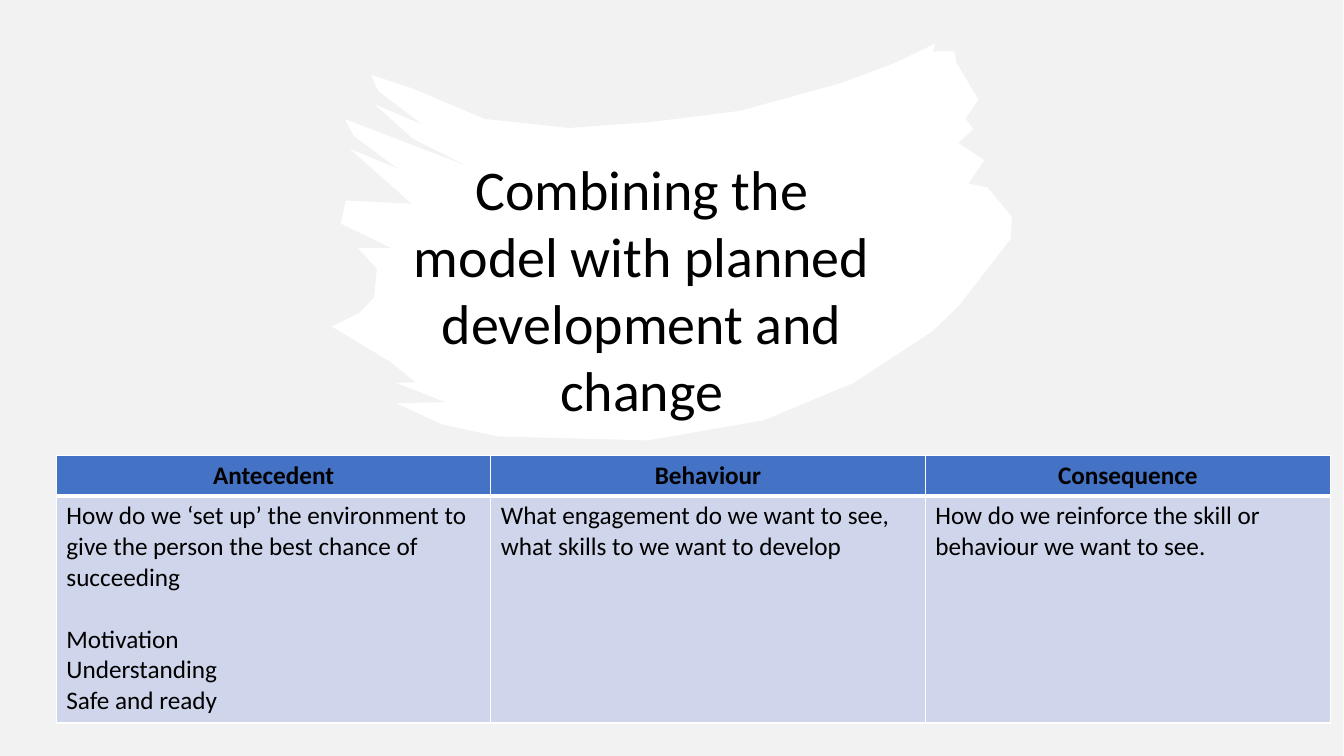
from lxml import etree
from pptx import Presentation
from pptx import util as u
from pptx.dml.color import RGBColor
from pptx.enum import shapes, text
from pptx.oxml import ns

BRUSH = [
    (928, 43), (889, 62), (836, 82), (734, 110), (646, 121), (565, 127), (481, 118),
    (410, 88), (368, 74), (375, 90), (418, 123), (371, 103), (410, 138), (462, 164),
    (342, 118), (351, 135), (394, 167), (346, 147), (408, 202), (343, 199), (338, 222),
    (388, 246), (355, 246), (374, 267), (371, 295), (357, 310), (329, 324), (387, 359),
    (412, 379), (393, 380), (442, 399), (393, 400), (438, 421), (493, 433), (643, 437),
    (758, 417), (847, 380), (925, 329), (951, 304), (1003, 237), (1004, 215), (980, 186),
    (961, 182), (977, 159), (951, 142), (966, 128), (958, 118), (971, 99), (949, 62),
    (947, 51), (926, 51),
]
PAGE = [(0, 0), (1333, 0), (1333, 750), (0, 750)]
HEADINGS = ["Antecedent", "Behaviour", "Consequence"]
QUESTIONS = [
    ["How do we ‘set up’ the environment to give the person the best chance of succeeding",
     "Motivation", "Understanding", "Safe and ready"],
    ["What engagement do we want to see, what skills to we want to develop"],
    ["How do we reinforce the skill or behaviour we want to see."],
]


def colour(value):
    return RGBColor.from_string(value)


def write(frame, lines, size=18, bold=False, align=text.PP_ALIGN.LEFT, gap=0):
    frame.word_wrap = True
    for index, line in enumerate(lines):
        paragraph = frame.paragraphs[0] if index == 0 else frame.add_paragraph()
        paragraph.alignment = align
        paragraph.line_spacing = 1.0
        paragraph.space_before = u.Pt(gap if index == 1 else 0)
        run = paragraph.add_run()
        run.text = line
        run.font.name = "Calibri"
        run.font.size = u.Pt(size)
        run.font.bold = bold
        run.font.color.rgb = colour("000000")


class Deck:
    white, grey, blue, pale = "FFFFFF", "E7E6E6", "4472C4", "CFD5EA"

    def __init__(self):
        self.show = Presentation()
        self.show.slide_width, self.show.slide_height = u.Cm(33.87), u.Cm(19.05)
        self.slide = self.show.slides.add_slide(self.show.slide_layouts[5])

    def paint(self, shape, fill):
        shape.shadow.inherit = False
        shape.fill.solid()
        shape.fill.fore_color.rgb = colour(fill)
        shape.line.fill.background()

    def backdrop(self):
        page = self.slide.shapes.add_shape(
            shapes.MSO_SHAPE.RECTANGLE, 0, 0, self.show.slide_width, self.show.slide_height)
        self.paint(page, self.white)

    def frame(self, hole, edge, opacity):
        builder = self.slide.shapes.build_freeform(*hole[0], scale=u.Cm(2.54) / 100)
        builder.add_line_segments(hole[1:], close=True)
        builder.move_to(*edge[0])
        builder.add_line_segments(edge[1:], close=True)
        surround = builder.convert_to_shape()
        self.paint(surround, self.grey)
        tint = surround._element.spPr.find(".//" + ns.qn("a:srgbClr"))
        etree.SubElement(tint, ns.qn("a:alpha"), val=str(opacity * 1000))

    def title(self, words, left, top, width, height):
        heading = self.slide.shapes.title
        self.slide.shapes._spTree.append(heading._element)
        heading.left, heading.top = u.Cm(left), u.Cm(top)
        heading.width, heading.height = u.Cm(width), u.Cm(height)
        heading.text_frame.vertical_anchor = text.MSO_ANCHOR.TOP
        heading.text_frame.auto_size = text.MSO_AUTO_SIZE.SHAPE_TO_FIT_TEXT
        write(heading.text_frame, [words], size=40, align=text.PP_ALIGN.CENTER)

    def border(self, cell, **widths):
        for side in "LRTB":
            edge = etree.SubElement(cell._tc.get_or_add_tcPr(), ns.qn("a:ln" + side),
                                    w=str(u.Pt(widths.get(side, 1))))
            fill = etree.SubElement(edge, ns.qn("a:solidFill"))
            etree.SubElement(fill, ns.qn("a:srgbClr"), val=self.white)

    def cell(self, cell, lines, fill, widths, **style):
        self.border(cell, **widths)
        cell.fill.solid()
        cell.fill.fore_color.rgb = colour(fill)
        write(cell.text_frame, lines, **style)

    def table(self, left, top, widths, heights):
        grid = self.slide.shapes.add_table(
            len(heights), len(widths), u.Cm(left), u.Cm(top),
            u.Cm(sum(widths)), u.Cm(sum(heights))).table
        for row, height in zip(grid.rows, heights):
            row.height = u.Cm(height)
        for index, width in enumerate(widths):
            grid.columns[index].width = u.Cm(width)
            self.cell(grid.cell(0, index), [HEADINGS[index]], self.blue, {"B": 3},
                      bold=True, align=text.PP_ALIGN.CENTER)
            self.cell(grid.cell(1, index), QUESTIONS[index], self.pale, {"T": 3}, gap=22)


def main():
    deck = Deck()
    deck.backdrop()
    deck.frame(BRUSH, PAGE, opacity=50)
    deck.title("Combining the model with planned development and change", 9.96, 3.76, 12.42, 7.09)
    deck.table(1.42, 11.48, [10.95, 10.95, 10.21], [0.98, 5.72])
    deck.show.save("out.pptx")


if __name__ == "__main__":
    main()
